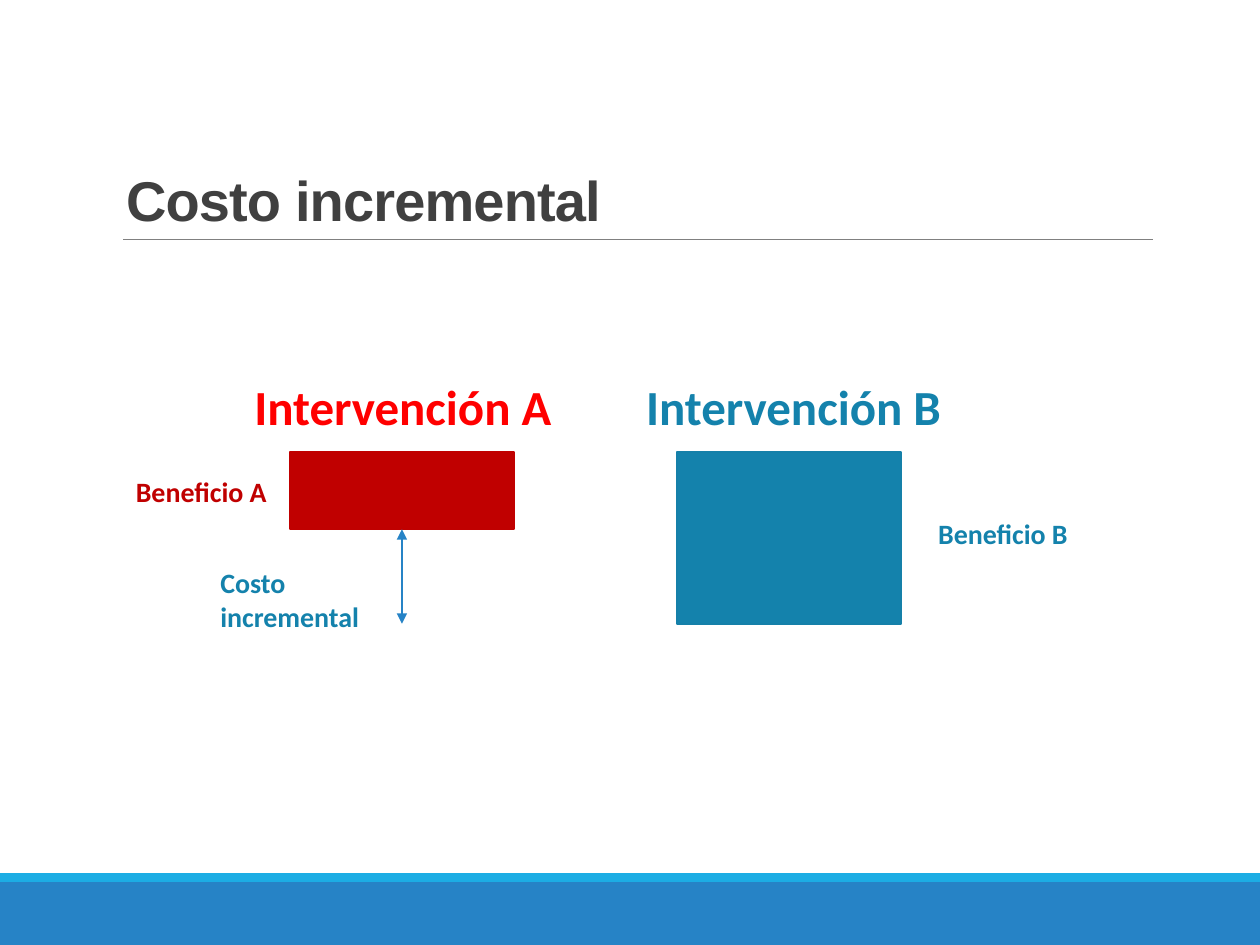
import pptx
import pptx.util
import pptx.dml.color
import pptx.enum.shapes
import pptx.enum.text
import pptx.oxml
import pptx.oxml.ns
from pptx.util import Inches

ALIGN = pptx.enum.text.PP_ALIGN
ANCHOR = pptx.enum.text.MSO_ANCHOR
RECTANGLE = pptx.enum.shapes.MSO_SHAPE.RECTANGLE
STRAIGHT = pptx.enum.shapes.MSO_CONNECTOR.STRAIGHT


def color(hex_value):
    return pptx.dml.color.RGBColor.from_string(hex_value)


def write(box, text, size=16, font="Calibri", fill="1482AC", align=ALIGN.LEFT,
          anchor=ANCHOR.TOP, wrap=True, line_spacing=None):
    frame = box.text_frame
    frame.word_wrap = wrap
    frame.vertical_anchor = anchor
    para = frame.paragraphs[0]
    para.alignment = align
    para.line_spacing = line_spacing
    span = para.add_run()
    span.text = text
    span.font.size = pptx.util.Pt(size)
    span.font.name = font
    span.font.bold = True
    span.font.color.rgb = color(fill)
    return span


deck = pptx.Presentation()
deck.slide_width, deck.slide_height = Inches(10), Inches(7.5)
page = deck.slides.add_slide(deck.slide_layouts[5])

# Footer bands, then the bars for the benefit of each intervention
rectangles = [
    (0, 7, 10, 0.5, "2683C6", None),
    (0, 6.93, 10, 0.07, "1CADE4", None),
    (2.3, 3.59, 1.78, 0.61, "C00000", "C00000"),
    (5.37, 3.59, 1.78, 1.36, "1482AC", "1580A9"),
]
bars = []
for left, top, width, height, fill, outline in rectangles:
    bar = page.shapes.add_shape(
        RECTANGLE, Inches(left), Inches(top), Inches(width), Inches(height))
    bar.shadow.inherit = False
    bar.fill.solid()
    bar.fill.fore_color.rgb = color(fill)
    if outline:
        bar.line.color.rgb = color(outline)
        bar.line.width = pptx.util.Pt(1.25)
    else:
        bar.line.fill.background()
    bars.append(bar)
benefit_a = bars[2]

# Title
title = page.shapes.title
title.left, title.top = Inches(0.9), Inches(0.31)
title.width, title.height = Inches(8.25), Inches(1.59)
heading = write(title, "Costo incremental", size=32, font="Arial", fill="404040",
                anchor=ANCHOR.BOTTOM, line_spacing=0.85)
heading.font._element.set("spc", "-50")

# Title rule and incremental cost arrow
lines = []
for x1, y1, x2, y2, stroke, weight in [
    (0.98, 1.9, 9.15, 1.9, "808080", 0.5),
    (3.19, 4.2, 3.19, 4.95, "2683C6", 1),
]:
    line = page.shapes.add_connector(
        STRAIGHT, Inches(x1), Inches(y1), Inches(x2), Inches(y2))
    line.line.color.rgb = color(stroke)
    line.line.width = pptx.util.Pt(weight)
    line._element.spPr.append(pptx.oxml.parse_xml(
        f'<a:effectLst {pptx.oxml.ns.nsdecls("a")}/>'))
    lines.append(line)
cost_arrow = lines[1]
cost_arrow.begin_connect(benefit_a, 2)
for end in ("headEnd", "tailEnd"):
    cost_arrow.line._get_or_add_ln().append(pptx.oxml.parse_xml(
        f'<a:{end} {pptx.oxml.ns.nsdecls("a")} type="triangle"/>'))

# Headings and labels
labels = [
    (1.92, 2.94, 2.59, 0.57, "Intervención A", dict(size=28, fill="FF0000", wrap=False)),
    (5.03, 2.94, 2.57, 0.57, "Intervención B", dict(size=28, wrap=False)),
    (0.98, 3.72, 1.78, 0.37, "Beneficio A", dict(fill="C00000")),
    (7.07, 4.05, 1.78, 0.37, "Beneficio B", dict(align=ALIGN.CENTER)),
    (1.65, 4.44, 1.78, 0.64, "Costo incremental", {}),
]
for left, top, width, height, text, style in labels:
    box = page.shapes.add_textbox(
        Inches(left), Inches(top), Inches(width), Inches(height))
    write(box, text, **style)

deck.save("out.pptx")
